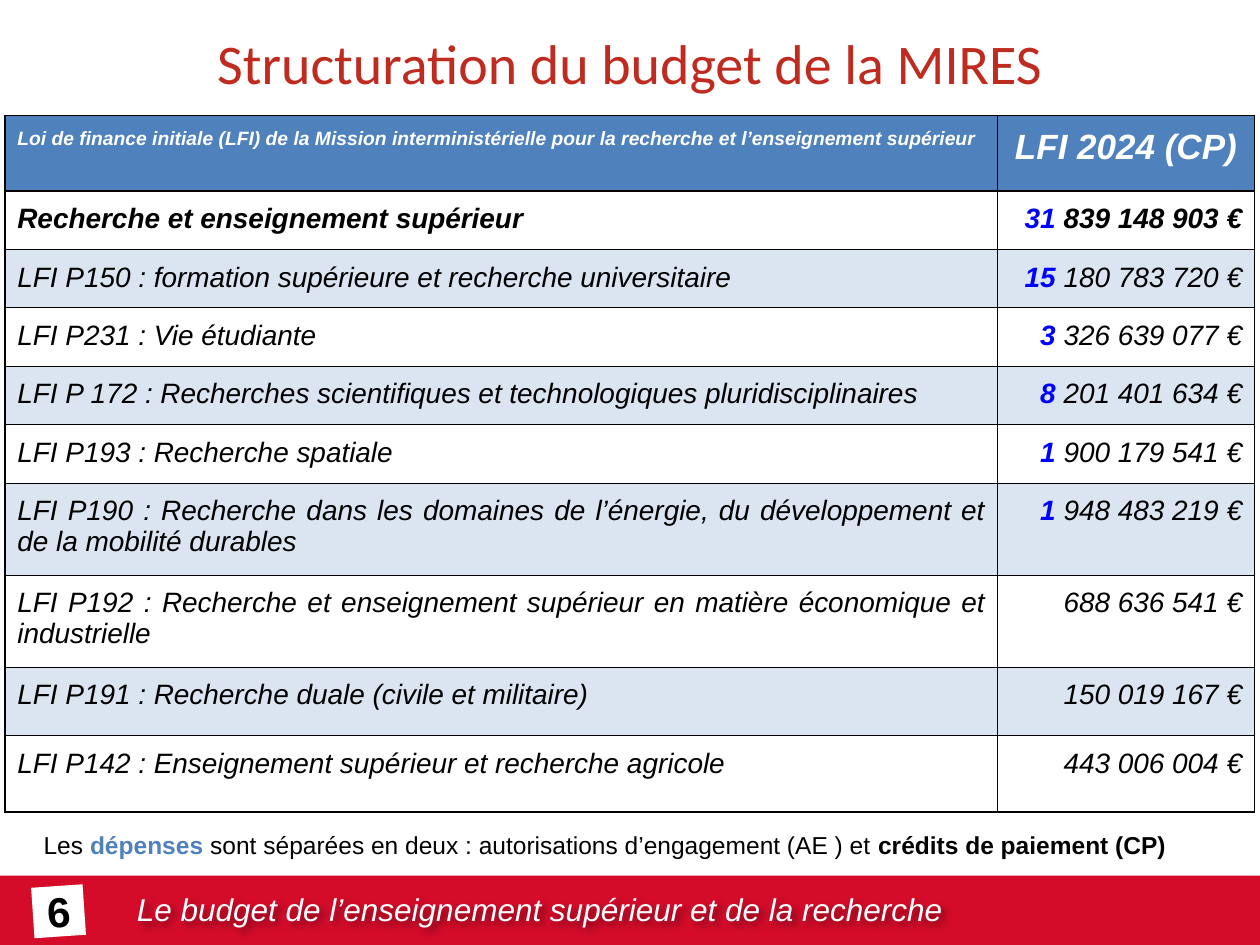
from lxml import etree
from pptx import Presentation
from pptx.dml.color import RGBColor
from pptx.enum.shapes import MSO_SHAPE
from pptx.enum.text import MSO_ANCHOR, PP_ALIGN
from pptx.oxml import parse_xml
from pptx.oxml.ns import nsdecls, qn
from pptx.util import Cm, Pt

RECT = MSO_SHAPE.RECTANGLE
TOP, MIDDLE = MSO_ANCHOR.TOP, MSO_ANCHOR.MIDDLE
LEFT, CENTER, RIGHT, JUSTIFY = PP_ALIGN.LEFT, PP_ALIGN.CENTER, PP_ALIGN.RIGHT, PP_ALIGN.JUSTIFY

WHITE = RGBColor(0xFF, 0xFF, 0xFF)
BLACK = RGBColor(0, 0, 0)
GRAY = RGBColor(0x80, 0x80, 0x80)
CRIMSON = RGBColor(0xD4, 0x0C, 0x2A)
BRICK = RGBColor(0xC0, 0x2B, 0x20)
STEEL = RGBColor(0x4F, 0x81, 0xBD)
PALE = RGBColor(0xDA, 0xE5, 0xF1)
BLUE = RGBColor(0, 0, 0xFF)

HEADER = (
    "Loi de finance initiale (LFI) de la Mission interministérielle pour la recherche et l’enseignement supérieur",
    "LFI 2024 (CP)",
)
BUDGET = [
    ("Recherche et enseignement supérieur", "31", "839 148 903 €", 1.16),
    ("LFI P150 : formation supérieure et recherche universitaire", "15", "180 783 720 €", 1.16),
    ("LFI P231 : Vie étudiante", "3", "326 639 077 €", 1.16),
    ("LFI P 172 : Recherches scientifiques et technologiques pluridisciplinaires", "8", "201 401 634 €", 1.16),
    ("LFI P193 : Recherche spatiale", "1", "900 179 541 €", 1.16),
    ("LFI P190 : Recherche dans les domaines de l’énergie, du développement et de la mobilité durables",
     "1", "948 483 219 €", 1.84),
    ("LFI P192 : Recherche et enseignement supérieur en matière économique et industrielle",
     "", "688 636 541 €", 1.84),
    ("LFI P191 : Recherche duale (civile et militaire)", "", "150 019 167 €", 1.38),
    ("LFI P142 : Enseignement supérieur et recherche agricole", "", "443 006 004 €", 1.54),
]


def add_run(p, text, size=16, color=BLACK, bold=False, italic=False, font="Arial"):
    r = p.add_run()
    r.text = text
    r.font.name = font
    r.font.size = Pt(size)
    r.font.bold = bold
    r.font.italic = italic
    r.font.color.rgb = color
    return r


class Deck:
    def __init__(self):
        self.prs = Presentation()
        self.prs.slide_width = Cm(25.4)
        self.prs.slide_height = Cm(19.05)
        self.s = self.prs.slides.add_slide(self.prs.slide_layouts[5])

    def title(self, text, x, y, w, h):
        sp = self.s.shapes.title
        sp.left, sp.top, sp.width, sp.height = Cm(x), Cm(y), Cm(w), Cm(h)
        tf = sp.text_frame
        tf.vertical_anchor = MIDDLE
        p = tf.paragraphs[0]
        p.alignment = CENTER
        add_run(p, text, size=32, color=BRICK, font="Calibri")

    def rect(self, x, y, w, h, fill, rotation=0):
        sp = self.s.shapes.add_shape(RECT, Cm(x), Cm(y), Cm(w), Cm(h))
        sp.shadow.inherit = False
        sp.fill.solid()
        sp.fill.fore_color.rgb = fill
        sp.line.fill.background()
        sp.rotation = rotation
        return sp

    def badge(self, text, x, y, w, h, rotation):
        tf = self.rect(x, y, w, h, WHITE, rotation).text_frame
        tf.margin_left = tf.margin_right = tf.margin_top = tf.margin_bottom = 0
        tf.vertical_anchor = MIDDLE
        p = tf.paragraphs[0]
        p.alignment = CENTER
        add_run(p, text, size=24, bold=True)

    def text(self, runs, x, y, w, h, wrap=True):
        sp = self.s.shapes.add_textbox(Cm(x), Cm(y), Cm(w), Cm(h))
        tf = sp.text_frame
        tf.word_wrap = wrap
        p = tf.paragraphs[0]
        p.alignment = LEFT
        for text, style in runs:
            add_run(p, text, **style)
        return sp

    def shadow(self, sp, color, alpha, blur, dist, angle):
        sp.shadow.inherit = False
        effects = sp._element.spPr.find(qn("a:effectLst"))
        effects.append(parse_xml(
            f'<a:outerShdw {nsdecls("a")} blurRad="{Pt(blur)}" dist="{Pt(dist)}" '
            f'dir="{angle * 60000}" algn="ctr" rotWithShape="0"><a:srgbClr val="{color}">'
            f'<a:alpha val="{alpha * 1000}"/></a:srgbClr></a:outerShdw>'))

    def table(self, x, y, widths, heights):
        table = self.s.shapes.add_table(
            len(heights), len(widths), Cm(x), Cm(y), Cm(sum(widths)), Cm(sum(heights))).table
        table.first_row = table.horz_banding = False
        for column, width in zip(table.columns, widths):
            column.width = Cm(width)
        for row, height in zip(table.rows, heights):
            row.height = Cm(height)
        return table

    def cell(self, cell, runs, align, fill=None):
        cell.margin_left = cell.margin_right = cell.margin_top = cell.margin_bottom = Cm(0.25)
        cell.vertical_anchor = TOP
        p = cell.text_frame.paragraphs[0]
        p.alignment = align
        for text, style in runs:
            add_run(p, text, italic=True, **style)
        tcPr = cell._tc.get_or_add_tcPr()
        for side in ("lnL", "lnR", "lnT", "lnB"):
            ln = etree.SubElement(tcPr, qn(f"a:{side}"), w=str(Pt(0.75)))
            solid = etree.SubElement(ln, qn("a:solidFill"))
            etree.SubElement(solid, qn("a:srgbClr"), val=str(BLACK))
        if fill is None:
            cell.fill.background()
        else:
            cell.fill.solid()
            cell.fill.fore_color.rgb = fill


def main():
    deck = Deck()
    band = deck.rect(0, 17.65, 25.4, 1.4, CRIMSON)
    deck.shadow(band, GRAY, 35, 3.1, 1.8, 90)
    footer = deck.text(
        [("Le budget de l’enseignement supérieur et de la recherche",
          dict(size=18, color=WHITE, italic=True))], 2.51, 17.81, 18.5, 1.02)
    deck.shadow(footer, BLACK, 43, 4, 3, 45)
    deck.title("Structuration du budget de la MIRES", 0, 0, 25.4, 2.5)
    deck.badge("6", 0.66, 17.86, 1.04, 1.02, 356.1)

    table = deck.table(0.1, 2.33, (20.01, 5.18), [1.52] + [row[-1] for row in BUDGET])
    for col, (text, size, align) in enumerate(zip(HEADER, (11, 20), (JUSTIFY, CENTER))):
        style = dict(size=size, color=WHITE, bold=True)
        deck.cell(table.cell(0, col), [(text, style)], align, STEEL)
    for i, (label, billions, rest, _) in enumerate(BUDGET, start=1):
        fill = PALE if i % 2 == 0 else None
        style = dict(bold=i == 1)
        amount = [(rest, style)]
        if billions:
            amount.insert(0, (f"{billions} ", dict(color=BLUE, bold=True)))
        deck.cell(table.cell(i, 0), [(label, style)], JUSTIFY, fill)
        deck.cell(table.cell(i, 1), amount, RIGHT, fill)

    deck.text([
        ("Les ", dict(size=14)),
        ("dépenses", dict(size=14, color=STEEL, bold=True)),
        (" sont séparées en deux : autorisations d’engagement (AE ) et ", dict(size=14)),
        ("crédits de paiement (CP)", dict(size=14, bold=True)),
    ], 0.63, 16.61, 23.5, 0.86, wrap=False)
    deck.prs.save("out.pptx")


if __name__ == "__main__":
    main()
